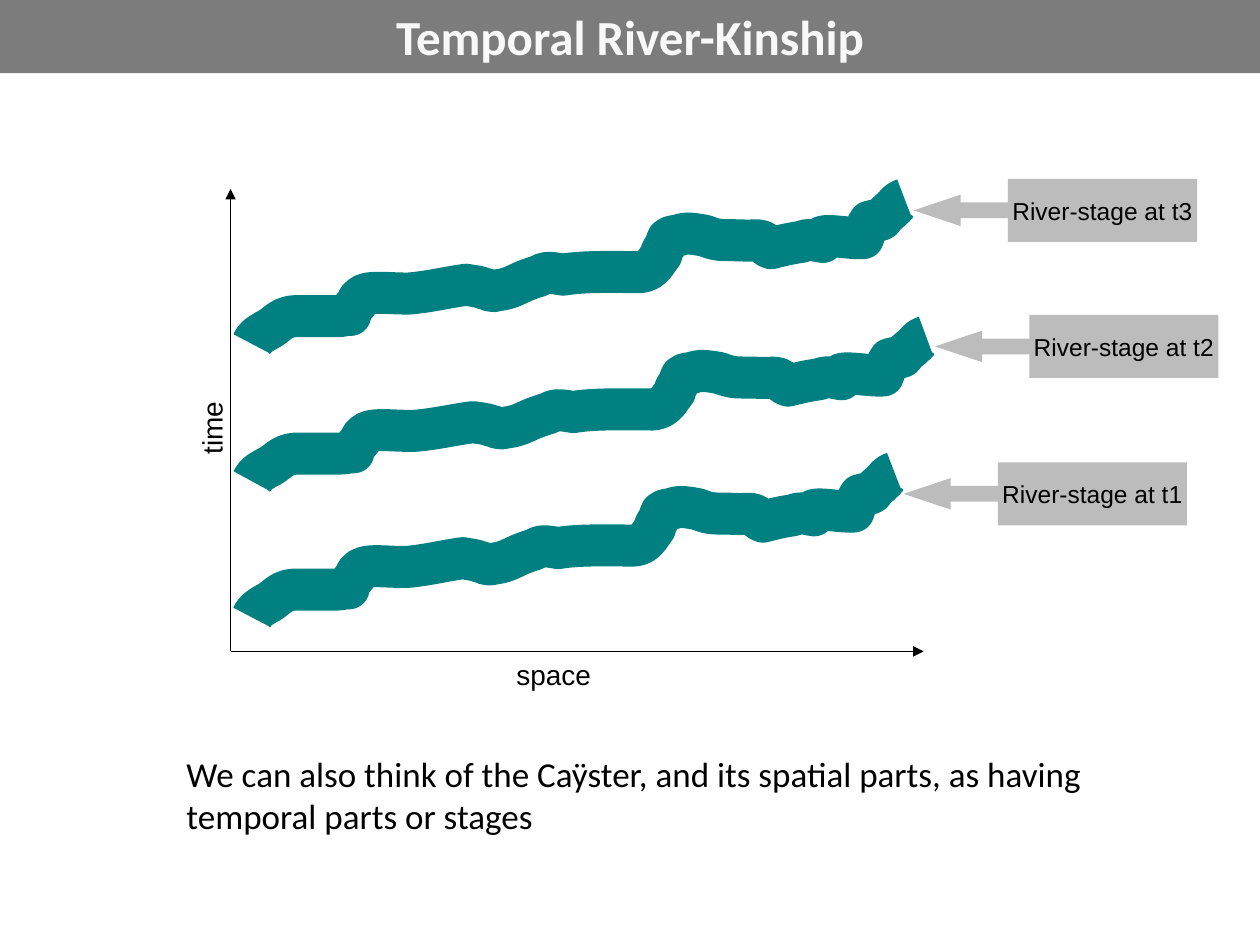
"""Build a slide showing three temporal stages of a river along space and time axes."""
from lxml import etree
from pptx import Presentation
from pptx import util as u
from pptx.dml.color import RGBColor
from pptx.enum import shapes, text
from pptx.oxml.ns import qn

BLACK = RGBColor(0x00, 0x00, 0x00)
TITLE_GRAY = RGBColor(0x7C, 0x7C, 0x7C)
TITLE_WHITE = RGBColor(0xF8, 0xF8, 0xF8)
CALLOUT_GRAY = RGBColor(0xBC, 0xBC, 0xBC)
RIVER_TEAL = RGBColor(0x00, 0x80, 0x80)


def write(shape, words, font="Arial", size=16, color=BLACK, bold=False,
          align=text.PP_ALIGN.LEFT, anchor=text.MSO_ANCHOR.TOP, wrap=False):
    frame = shape.text_frame
    frame.auto_size = text.MSO_AUTO_SIZE.NONE
    frame.word_wrap = wrap
    frame.vertical_anchor = anchor
    para = frame.paragraphs[0]
    para.alignment = align
    span = para.add_run()
    span.text = words
    span.font.name = font
    span.font.size = u.Pt(size)
    span.font.bold = bold
    span.font.color.rgb = color
    return para


def place(shape, left, top, width, height):
    shape.left, shape.top = u.Inches(left), u.Inches(top)
    shape.width, shape.height = u.Inches(width), u.Inches(height)


deck = Presentation()
deck.slide_width, deck.slide_height = u.Inches(10), u.Inches(7.5)
page = deck.slides.add_slide(deck.slide_layouts[1])

title = page.shapes.title
place(title, 0, 0, 10, 0.58)
title.fill.solid()
title.fill.fore_color.rgb = TITLE_GRAY
write(title, "Temporal River-Kinship", font="Calibri", size=28, color=TITLE_WHITE, bold=True,
      align=text.PP_ALIGN.CENTER, wrap=True)

body = page.placeholders[1]
place(body, 1, 5.92, 7.92, 1.25)
para = write(body, "We can also think of the Caÿster, and its spatial parts, as having "
             "temporal parts or stages", font="Calibri", size=20, wrap=True)
para.space_after = u.Pt(24)
properties = para._p.get_or_add_pPr()
properties.set("marL", str(u.Inches(0.38)))
properties.set("indent", "0")
etree.SubElement(properties, qn("a:buNone"))

river_curves = [
    (0.02, 1.10, 0.05, 1.08, 0.12, 1.04), (0.19, 1.01, 0.22, 0.94, 0.33, 0.93),
    (0.43, 0.93, 0.54, 0.93, 0.64, 0.93), (0.68, 0.93, 0.71, 0.93, 0.75, 0.92),
    (0.76, 0.92, 0.77, 0.92, 0.78, 0.92), (0.79, 0.90, 0.78, 0.89, 0.79, 0.88),
    (0.80, 0.86, 0.82, 0.84, 0.83, 0.83), (0.86, 0.71, 1.01, 0.75, 1.24, 0.75),
    (1.39, 0.74, 1.55, 0.70, 1.70, 0.68), (1.75, 0.69, 1.79, 0.69, 1.84, 0.71),
    (1.92, 0.73, 1.84, 0.72, 1.92, 0.73), (1.96, 0.72, 1.99, 0.72, 2.02, 0.71),
    (2.09, 0.69, 2.13, 0.66, 2.19, 0.64), (2.22, 0.63, 2.24, 0.62, 2.28, 0.61),
    (2.33, 0.57, 2.40, 0.59, 2.47, 0.60), (2.64, 0.57, 2.92, 0.58, 3.08, 0.58),
    (3.16, 0.57, 3.17, 0.54, 3.20, 0.51), (3.22, 0.48, 3.25, 0.44, 3.25, 0.44),
    (3.25, 0.42, 3.25, 0.41, 3.26, 0.40), (3.26, 0.39, 3.28, 0.38, 3.28, 0.37),
    (3.30, 0.32, 3.28, 0.30, 3.38, 0.29), (3.45, 0.26, 3.52, 0.28, 3.59, 0.29),
    (3.72, 0.34, 3.71, 0.32, 3.93, 0.33), (3.98, 0.33, 4.03, 0.32, 4.06, 0.34),
    (4.10, 0.36, 4.06, 0.37, 4.12, 0.39), (4.20, 0.37, 4.28, 0.35, 4.36, 0.34),
    (4.43, 0.31, 4.46, 0.33, 4.53, 0.34), (4.45, 0.25, 4.73, 0.32, 4.85, 0.31),
    (4.87, 0.26, 4.87, 0.22, 4.90, 0.18), (4.91, 0.17, 4.93, 0.18, 4.94, 0.17),
    (4.96, 0.17, 4.99, 0.17, 5.00, 0.16), (5.02, 0.13, 5.04, 0.11, 5.08, 0.08),
    (5.08, 0.07, 5.10, 0.06, 5.10, 0.06), (5.11, 0.04, 5.14, 0.01, 5.18, 0),
]
river_points = [(0, 1.15)]
for curve in river_curves:
    river_points.extend(zip(curve[::2], curve[1::2]))

for top, width in [(1.58, 5.18), (2.67, 5.35), (3.75, 5.10)]:
    stretch = width / 5.18
    points = [(u.Inches(2 + x * stretch), u.Inches(top + y)) for x, y in river_points]
    builder = page.shapes.build_freeform(*points[0])
    builder.add_line_segments(points[1:], close=False)
    river = builder.convert_to_shape()
    segments = list(river.element.iter(qn("a:lnTo")))
    for first, second, third in zip(segments[::3], segments[1::3], segments[2::3]):
        bend = etree.Element(qn("a:cubicBezTo"))
        first.addprevious(bend)
        for segment in (first, second, third):
            bend.append(segment[0])
            segment.getparent().remove(segment)
    river.shadow.inherit = False
    river.fill.background()
    river.line.color.rgb = RIVER_TEAL
    river.line.width = u.Pt(24)

for end_x, end_y in [(1.83, 1.5), (7.33, 5.17)]:
    axis = page.shapes.add_connector(shapes.MSO_CONNECTOR.STRAIGHT, u.Inches(1.83),
                                     u.Inches(5.17), u.Inches(end_x), u.Inches(end_y))
    axis.line.color.rgb = BLACK
    axis.line.width = u.Pt(0.75)
    outline = axis.element.spPr.find(qn("a:ln"))
    etree.SubElement(outline, qn("a:tailEnd"), type="triangle")
    etree.SubElement(axis.element.spPr, qn("a:effectLst"))

for words, left, top, width, rotation in [("time", 1.37, 3.21, 0.62, 270),
                                          ("space", 4, 5.17, 0.8, 0)]:
    box = page.shapes.add_textbox(u.Inches(left), u.Inches(top), u.Inches(width), u.Inches(0.37))
    box.rotation = rotation
    write(box, words)

for stage, left, top in [("t1", 7.17, 3.67), ("t3", 7.25, 1.42), ("t2", 7.42, 2.5)]:
    callout = page.shapes.add_shape(shapes.MSO_SHAPE.LEFT_ARROW_CALLOUT, u.Inches(left),
                                    u.Inches(top), u.Inches(2.25), u.Inches(0.5))
    for index, value in enumerate((0.25, 0.25, 0.75, 0.667)):
        callout.adjustments[index] = value
    callout.shadow.inherit = False
    callout.fill.solid()
    callout.fill.fore_color.rgb = CALLOUT_GRAY
    callout.line.fill.background()
    write(callout, f"River-stage at {stage}", size=14,
          align=text.PP_ALIGN.CENTER, anchor=text.MSO_ANCHOR.MIDDLE)

deck.save("out.pptx")
